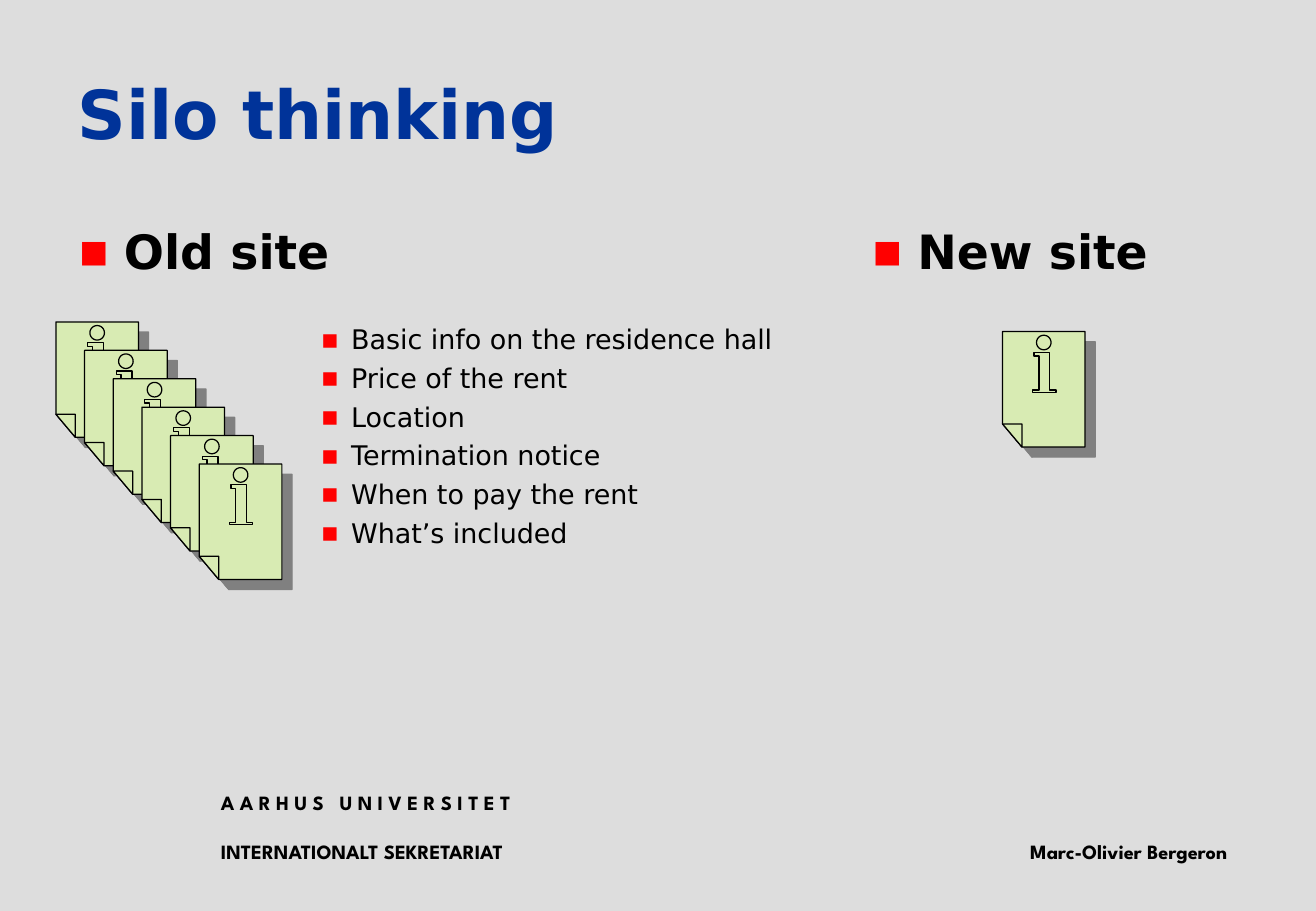
from math import cos, pi, sin

from lxml import etree
from pptx import Presentation
from pptx.dml.color import RGBColor
from pptx.enum.text import MSO_ANCHOR, MSO_AUTO_SIZE, PP_ALIGN
from pptx.oxml.ns import qn
from pptx.util import Emu, Pt

BLACK = RGBColor(0x00, 0x00, 0x00)
BLUE = RGBColor(0x00, 0x33, 0x99)
RED = RGBColor(0xFF, 0x00, 0x00)
GREY = RGBColor(0xDD, 0xDD, 0xDD)
SHADOW = RGBColor(0x80, 0x80, 0x80)
PAPER = RGBColor(0xD8, 0xEB, 0xB3)
BODY_FONT = "DejaVu Sans"
FOOTER_FONT = "League Spartan"

FACTS = [
    "Basic info on the residence hall",
    "Price of the rent",
    "Location",
    "Termination notice",
    "When to pay the rent",
    "What’s included",
]

# Contours of an information sheet, in px from its top left corner
SHEET = [(0, 0), (68, 0), (68, 95), (16, 95), (0, 76)]
FOLD = [(0, 76), (16, 76), (16, 95)]
STEM = [(26, 17), (39, 17), (39, 48), (44, 48), (44, 50),
        (25, 50), (25, 48), (30, 48), (30, 20), (26, 20)]
DOT = [(34 + 6 * cos(k * pi / 12), 9 + 6 * sin(k * pi / 12)) for k in range(24)]


def px(n):
    """Turn px, 100 to the inch, into EMU."""
    return Emu(round(n * 9144))


def place(sp, box):
    sp.left, sp.top, sp.width, sp.height = map(px, box)
    tf = sp.text_frame
    tf.word_wrap = True
    tf.auto_size = MSO_AUTO_SIZE.NONE
    return tf


def add_run(p, text, size, font, color=BLACK, bold=True):
    r = p.add_run()
    r.text = text
    r.font.size = Pt(size)
    r.font.name = font
    r.font.bold = bold
    r.font.color.rgb = color
    return r


def add_bullet(p, left, hanging):
    pPr = p._p.get_or_add_pPr()
    pPr.set("marL", str(px(left)))
    pPr.set("indent", str(-px(hanging)))
    color = etree.SubElement(pPr, qn("a:buClr"))
    etree.SubElement(color, qn("a:srgbClr"), val=str(RED))
    etree.SubElement(pPr, qn("a:buFont"), typeface=BODY_FONT)
    etree.SubElement(pPr, qn("a:buChar"), char="▪")


def fill_title(sp, box):
    tf = place(sp, box)
    tf.vertical_anchor = MSO_ANCHOR.MIDDLE
    p = tf.paragraphs[0]
    p.alignment = PP_ALIGN.LEFT
    add_run(p, "Silo thinking", 40, BODY_FONT, BLUE)


def fill_site(sp, box, heading, facts=()):
    tf = place(sp, box)
    tf.vertical_anchor = MSO_ANCHOR.TOP
    p = tf.paragraphs[0]
    p.space_before = Pt(0)
    add_bullet(p, 38, 38)
    add_run(p, heading, 28, BODY_FONT)
    for i, fact in enumerate(facts):
        p = tf.add_paragraph()
        p.level = 4
        p.space_before = Pt(3.75 if i else 26)
        add_bullet(p, 225, 25)
        add_run(p, fact, 16, BODY_FONT, bold=False)


def split_contours(sp):
    """Give each contour its own path, so that inner ones are filled too."""
    first = sp.element.find(".//" + qn("a:path"))
    current = first
    for step in list(first):
        if step.tag == qn("a:moveTo") and step is not first[0]:
            current = etree.SubElement(first.getparent(), qn("a:path"), dict(first.attrib))
        if current is not first:
            current.append(step)


def add_shadow(sp):
    sp.shadow.inherit = False
    effects = sp.element.spPr.find(qn("a:effectLst"))
    shadow = etree.SubElement(effects, qn("a:outerShdw"), dist=str(Pt(8.5)),
                              dir="2700000", algn="ctr", rotWithShape="0")
    etree.SubElement(shadow, qn("a:srgbClr"), val=str(SHADOW))


def add_sheet(s, left, top):
    contours = [[(px(x), px(y)) for x, y in c] for c in (SHEET, FOLD, STEM, DOT)]
    builder = s.shapes.build_freeform(*contours[0][0])
    for i, (start, *rest) in enumerate(contours):
        if i:
            builder.move_to(*start)
        builder.add_line_segments(rest, close=True)
    sp = builder.convert_to_shape(px(left), px(top))
    split_contours(sp)
    sp.fill.solid()
    sp.fill.fore_color.rgb = PAPER
    sp.line.color.rgb = BLACK
    sp.line.width = Pt(0.75)
    add_shadow(sp)


def add_sheet_stack(s, left, top, count):
    for i in range(count):
        add_sheet(s, left + 23.6 * i, top + 23.4 * i)


def add_sender(s, box):
    tf = place(s.shapes.add_textbox(0, 0, 0, 0), box)
    p = tf.paragraphs[0]
    add_run(p, "A A R H U S", 12, FOOTER_FONT)
    gap = add_run(p, " ", 12, FOOTER_FONT)
    gap.font._element.set("spc", "600")
    add_run(p, "U N I V E R S I T E T", 12, FOOTER_FONT)
    p = tf.add_paragraph()
    p.space_before = Pt(14.7)
    add_run(p, "INTERNATIONALT SEKRETARIAT", 12, FOOTER_FONT)


def add_author(s, box):
    p = place(s.shapes.add_textbox(0, 0, 0, 0), box).paragraphs[0]
    p.alignment = PP_ALIGN.RIGHT
    add_run(p, "Marc-Olivier Bergeron", 12, FOOTER_FONT)


def main():
    prs = Presentation()
    prs.slide_width, prs.slide_height = px(1083), px(750)
    s = prs.slides.add_slide(prs.slide_layouts[3])
    s.background.fill.solid()
    s.background.fill.fore_color.rgb = GREY
    title, old_site, new_site = s.placeholders

    add_author(s, (683, 686, 337, 30))
    add_sender(s, (172, 646, 386, 96))
    fill_title(title, (54, 30, 975, 125))
    fill_site(old_site, (54, 178, 606, 402), "Old site", FACTS)
    add_sheet_stack(s, 46, 265, 6)
    fill_site(new_site, (707, 178, 354, 394), "New site")
    add_sheet(s, 825, 273)
    prs.save("out.pptx")


if __name__ == "__main__":
    main()
